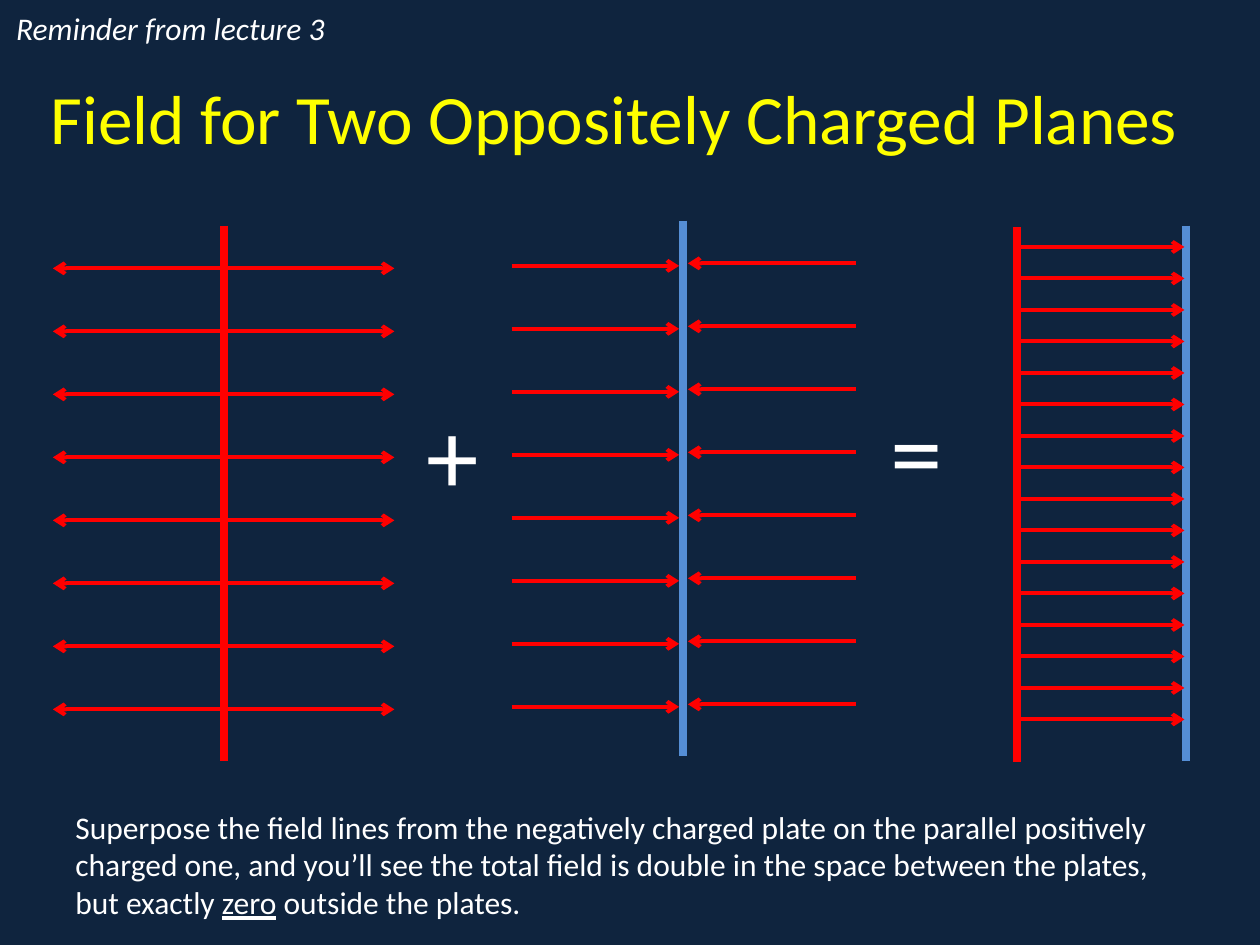
from pptx import Presentation
from pptx.dml.color import RGBColor
from pptx.enum.shapes import MSO_CONNECTOR
from pptx.enum.text import MSO_ANCHOR, MSO_AUTO_SIZE, PP_ALIGN
from pptx.oxml.ns import qn
from pptx.util import Inches, Pt
from lxml import etree

STRAIGHT = MSO_CONNECTOR.STRAIGHT
MIDDLE = MSO_ANCHOR.MIDDLE
CENTER = PP_ALIGN.CENTER
NO_AUTOFIT = MSO_AUTO_SIZE.NONE

COLORS = {
    "background": "0F243E",
    "title": "FFFF00",
    "text": "FFFFFF",
    "positive": "FF0000",
    "negative": "558ED5",
    "field": "FF0000",
}
FONT = "Calibri"
PLATE_HEIGHT = 4.25
ARROW_LENGTH = 1.33


class FieldSlide:
    """Hold the slide and its style, and draw text, charged plates and field arrows."""

    def __init__(self, presentation):
        self.slide = presentation.slides.add_slide(presentation.slide_layouts[5])
        fill = self.slide.background.fill
        fill.solid()
        fill.fore_color.rgb = self.color("background")

    def color(self, name):
        return RGBColor.from_string(COLORS[name])

    def add_run(self, paragraph, text, color, **formats):
        run = paragraph.add_run()
        run.text = text
        run.font.color.rgb = self.color(color)
        for name, value in {"name": FONT, **formats}.items():
            setattr(run.font, name, value)

    def title(self, text, left, top, width, height):
        shape = self.slide.shapes.title
        box = {"left": left, "top": top, "width": width, "height": height}
        for name, value in box.items():
            setattr(shape, name, Inches(value))
        frame = shape.text_frame
        frame.auto_size = NO_AUTOFIT
        frame.vertical_anchor = MIDDLE
        paragraph = frame.paragraphs[0]
        paragraph.alignment = CENTER
        self.add_run(paragraph, text, "title", size=Pt(39.6))

    def text(self, runs, left, top, width, height, size=18):
        shape = self.slide.shapes.add_textbox(
            Inches(left), Inches(top), Inches(width), Inches(height))
        shape.text_frame.word_wrap = True
        for text, formats in runs:
            self.add_run(shape.text_frame.paragraphs[0], text, "text", size=Pt(size), **formats)

    def group(self):
        return self.slide.shapes.add_group_shape().shapes

    def line(self, shapes, start, end, color, width):
        points = [Inches(value) for value in (*start, *end)]
        connector = shapes.add_connector(STRAIGHT, *points)
        connector.line.color.rgb = self.color(color)
        connector.line.width = Pt(width)
        properties = connector._element.spPr
        etree.SubElement(properties, qn("a:effectLst"))
        return connector

    def plate(self, shapes, x, top, charge):
        self.line(shapes, (x, top), (x, top + PLATE_HEIGHT), charge, 4.5)

    def arrows(self, shapes, x, top, count=8, step=0.5, direction=1):
        for row in range(count):
            y = top + row * step
            end = (x + direction * ARROW_LENGTH, y)
            connector = self.line(shapes, (x, y), end, "field", 2.25)
            outline = connector.line._get_or_add_ln()
            etree.SubElement(outline, qn("a:tailEnd"), type="arrow")


def main():
    presentation = Presentation()
    presentation.slide_width = Inches(10)
    presentation.slide_height = Inches(7.5)
    page = FieldSlide(presentation)
    page.title("Field for Two Oppositely Charged Planes", 0.25, 0.3, 9.25, 1.25)

    page.plate(page.slide.shapes, 1.78, 1.79, "positive")
    page.arrows(page.group(), 1.8, 2.13)
    page.arrows(page.group(), 1.75, 2.13, direction=-1)

    page.plate(page.slide.shapes, 5.42, 1.75, "negative")
    page.arrows(page.group(), 4.06, 2.11)
    page.arrows(page.group(), 6.79, 2.09, direction=-1)

    total_field = page.group()
    page.plate(total_field, 9.41, 1.79, "negative")
    page.plate(total_field, 8.07, 1.8, "positive")
    page.arrows(total_field, 8.07, 1.96, count=16, step=0.25)

    page.text([("+", {})], 3.29, 3.04, 0.75, 1.11, size=60)
    page.text([("=", {})], 6.97, 3.01, 0.75, 1.11, size=60)
    page.text([
        ("Superpose the field lines from the negatively charged plate on the parallel "
         "positively charged one, and you’ll see the total field is double in the space "
         "between the plates, but exactly ", {}),
        ("zero", {"underline": True}),
        (" outside the plates.", {}),
    ], 0.5, 6.36, 8.76, 1.01)
    page.text([("Reminder from lecture 3", {"italic": True})], 0.03, 0.02, 2.92, 0.4)
    presentation.save("out.pptx")


if __name__ == "__main__":
    main()
